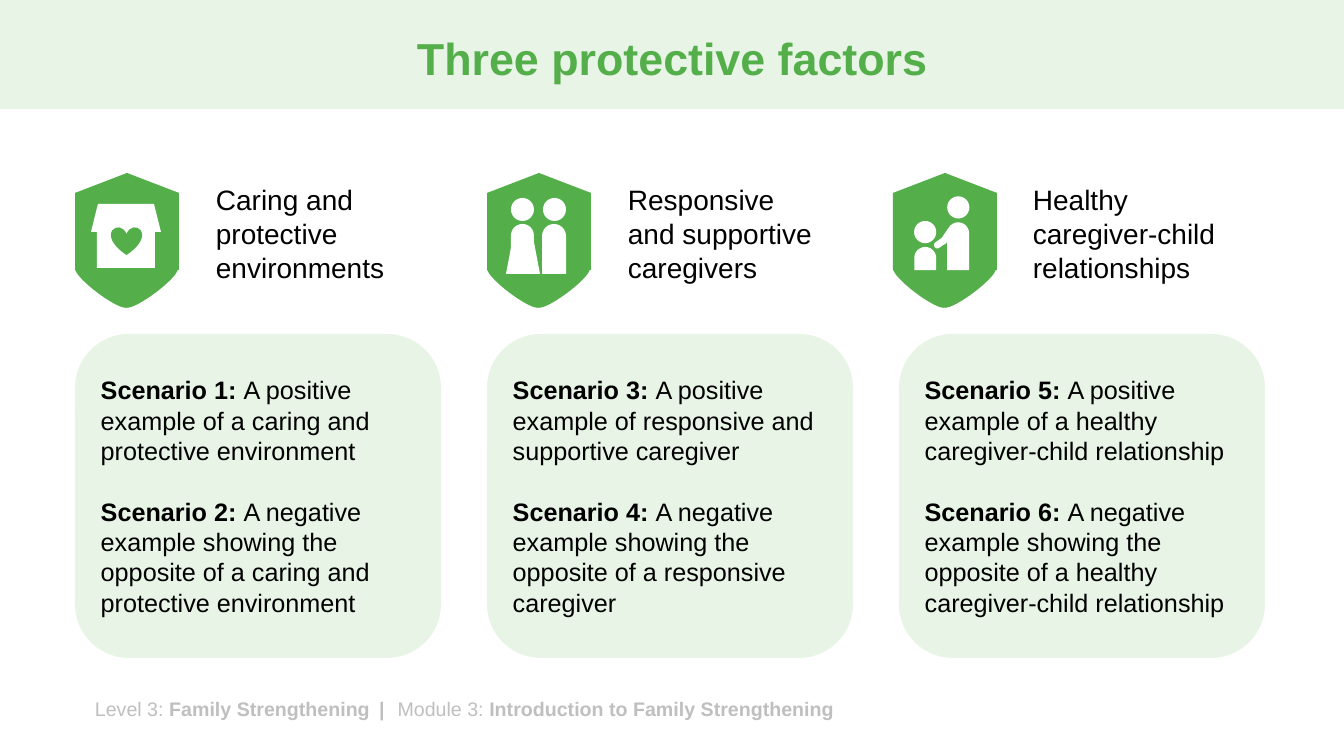
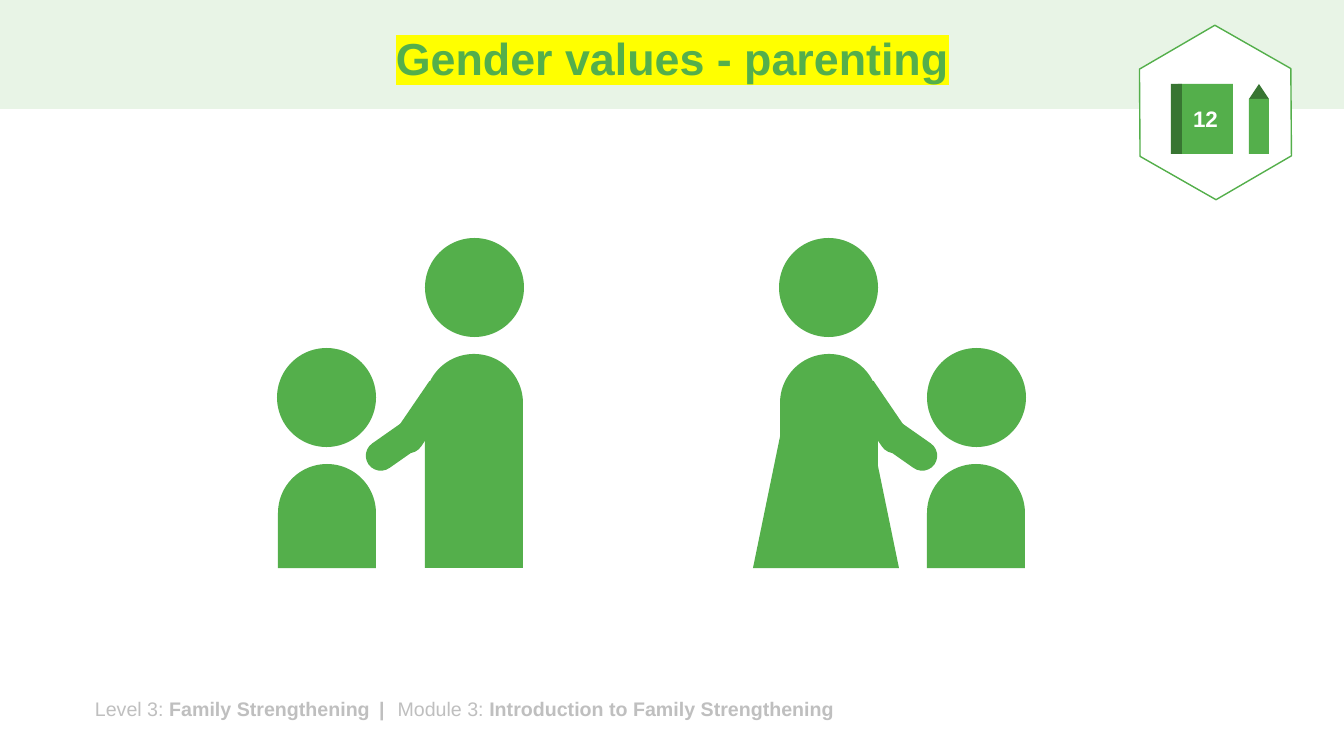
from lxml import etree
from pptx import Presentation
from pptx.dml.color import RGBColor
from pptx.enum.shapes import MSO_SHAPE as KIND
from pptx.enum.text import MSO_ANCHOR, PP_ALIGN
from pptx.oxml.ns import qn
from pptx.util import Pt

PX = 914400 / 100.8
FONT = "Arial"
HEX = {
    "green": "54AF4B",
    "dark": "387532",
    "pale": "E8F4E6",
    "white": "FFFFFF",
    "black": "000000",
    "grey": "BFBFBF",
    "yellow": "FFFF00",
}


def draw(shapes, kind, box, fill, turn=0, adj=()):
    """Add a plain filled shape; box is left, top, width, height in px."""
    shape = shapes.add_shape(kind, *(round(v * PX) for v in box))
    shape.shadow.inherit = False
    shape.fill.solid()
    shape.fill.fore_color.rgb = RGBColor.from_string(HEX[fill])
    shape.line.fill.background()
    shape.rotation = turn
    for i, value in enumerate(adj):
        shape.adjustments[i] = value
    return shape


def write(para, runs, size, color, align=PP_ALIGN.LEFT):
    """Fill a paragraph with (text, bold) runs in one font."""
    para.alignment = align
    para.font.name = FONT
    para.font.size = Pt(size)
    para.font.color.rgb = RGBColor.from_string(HEX[color])
    for text, bold in runs:
        run = para.add_run()
        run.text = text
        run.font.bold = bold


deck = Presentation()
deck.slide_width = round(1344 * PX)
deck.slide_height = round(756 * PX)

# Shared band, title and footer
FOOT = [
    ("Level 3: ", False),
    ("Family Strengthening", True),
    (" | ", True),
    ("Module 3: ", False),
    ("Introduction to Family Strengthening", True),
]
pages, heads = [], []
for title in ("Three protective factors", "Gender values - parenting"):
    page = deck.slides.add_slide(deck.slide_layouts[6])
    draw(page.shapes, KIND.RECTANGLE, (0, 0, 1344, 109), "pale")

    foot = page.shapes.add_textbox(*(round(v * PX) for v in (85, 692, 1070, 34)))
    foot.text_frame.word_wrap = True
    line = foot.text_frame.paragraphs[0]
    write(line, FOOT, 14, "grey")
    # Wider letter spacing around the bar
    line.runs[2].font._element.set("spc", "260")

    head = page.shapes.add_textbox(*(round(v * PX) for v in (93, 13, 1159, 96)))
    head.text_frame.word_wrap = True
    head.text_frame.vertical_anchor = MSO_ANCHOR.MIDDLE
    line = head.text_frame.paragraphs[0]
    line.line_spacing = 0.9
    write(line, [(title, True)], 32, "green", PP_ALIGN.CENTER)
    pages.append(page)
    heads.append(line)

# Figures used on both slides
ROUND = KIND.ROUND_2_SAME_RECTANGLE
TOP = (0.5, 0)
PAIR = [
    (ROUND, (278, 464, 98, 104), 0, TOP),
    (KIND.OVAL, (277, 348, 99, 99), 0, ()),
    (ROUND, (425, 354, 98, 214), 0, TOP),
    (KIND.OVAL, (425, 238, 99, 99), 0, ()),
    (ROUND, (406, 383, 30, 74), 214.3, TOP),
    (ROUND, (374, 425, 30, 50), 235, TOP),
]

# Slide 1: shields, labels and cards
SHIELD = [
    (KIND.RECTANGLE, (0, 193, 104, 77), 0),
    (KIND.FLOWCHART_STORED_DATA, (50, 245, 38, 65), 233.2),
    (KIND.FLOWCHART_STORED_DATA, (15, 245, 38, 65), 307),
    (KIND.RECTANGLE, (17, 232, 70, 45), 0),
    (KIND.ISOSCELES_TRIANGLE, (0, 173, 104, 20), 0),
]
HOUSE = [
    (KIND.TRAPEZOID, (91, 204, 70, 28), "white", 0, ()),
    (KIND.RECTANGLE, (97, 232, 58, 36), "white", 0, ()),
    (KIND.HEART, (111, 227, 31, 28), "green", 0, ()),
]
COUPLE = [
    (ROUND, (542, 224, 24, 50), "white", 0, TOP),
    (KIND.OVAL, (543, 198, 23, 23), "white", 0, ()),
    (ROUND, (511, 224, 23, 50), "white", 0, TOP),
    (KIND.OVAL, (511, 198, 23, 23), "white", 0, ()),
    (KIND.FLOWCHART_MANUAL_OPERATION, (506, 238, 34, 36), "white", 180, ()),
]
SCALE = 0.224
CARER = [
    (kind, (852 + x * SCALE, 143 + y * SCALE, w * SCALE, h * SCALE), "white", turn, adj)
    for kind, (x, y, w, h), turn, adj in PAIR
]
FACTORS = [
    (75, 206, HOUSE, "Caring and protective environments",
     "A positive example of a caring and protective environment",
     "A negative example showing the opposite of a caring and protective environment"),
    (487, 618, COUPLE, "Responsive and supportive caregivers",
     "A positive example of responsive and supportive caregiver",
     "A negative example showing the opposite of a responsive caregiver"),
    (893, 1023, CARER, "Healthy caregiver-child relationships",
     "A positive example of a healthy caregiver-child relationship",
     "A negative example showing the opposite of a healthy caregiver-child relationship"),
]
shapes = pages[0].shapes
for i, (left, start, icon, name, good, bad) in enumerate(FACTORS):
    badge = shapes.add_group_shape().shapes
    for kind, (x, y, w, h), turn in SHIELD:
        draw(badge, kind, (left + x, y, w, h), "green", turn)
    for part in icon:
        draw(badge, *part)

    label = shapes.add_textbox(*(round(v * PX) for v in (start, 178, 210, 112)))
    label.text_frame.word_wrap = True
    write(label.text_frame.paragraphs[0], [(name, False)], 20, "black")

    card = draw(shapes, KIND.ROUNDED_RECTANGLE, (75 + 412 * i, 334, 366, 324), "pale")
    frame = card.text_frame
    frame.word_wrap = True
    frame.vertical_anchor = MSO_ANCHOR.MIDDLE
    first, second = frame.paragraphs[0], frame.add_paragraph()
    first.space_after = Pt(22)
    for step, (para, text) in enumerate(((first, good), (second, bad)), 1):
        runs = [(f"Scenario {2 * i + step}: ", True), (text, False)]
        write(para, runs, 18, "black")

# Slide 2: title highlight
look = heads[1].runs[0].font
look.color.rgb = RGBColor.from_string(HEX["green"])
mark = etree.Element(qn("a:highlight"))
etree.SubElement(mark, qn("a:srgbClr")).set("val", HEX["yellow"])
look._element.find(qn("a:solidFill")).addnext(mark)

# Slide 2: workbook badge
shapes = pages[1].shapes
badge = shapes.add_group_shape().shapes
frame = draw(badge, KIND.HEXAGON, (1128, 37, 175, 151), "white", 29.7, (0.29,))
frame.line.color.rgb = RGBColor.from_string(HEX["green"])
frame.line.width = Pt(1)
book = draw(badge, KIND.RECTANGLE, (1178, 84, 55, 70), "green")
book.text_frame.word_wrap = False
book.text_frame.vertical_anchor = MSO_ANCHOR.MIDDLE
write(book.text_frame.paragraphs[0], [("12", True)], 16, "white", PP_ALIGN.CENTER)
draw(badge, KIND.RECTANGLE, (1171, 84, 11, 70), "dark")
draw(badge, KIND.ISOSCELES_TRIANGLE, (1249, 84, 20, 15), "dark")
draw(badge, KIND.RECTANGLE, (1249, 99, 20, 55), "green")

# Slide 2: parent and child, then the mirrored pair with a skirt
left = shapes.add_group_shape().shapes
right = shapes.add_group_shape().shapes
for kind, (x, y, w, h), turn, adj in PAIR:
    draw(left, kind, (x, y, w, h), "green", turn, adj)
    draw(right, kind, (1303 - x - w, y, w, h), "green", -turn % 360, adj)
draw(right, KIND.TRAPEZOID, (753, 419, 146, 149), "green", 0, (0.21,))

deck.save("out.pptx")
